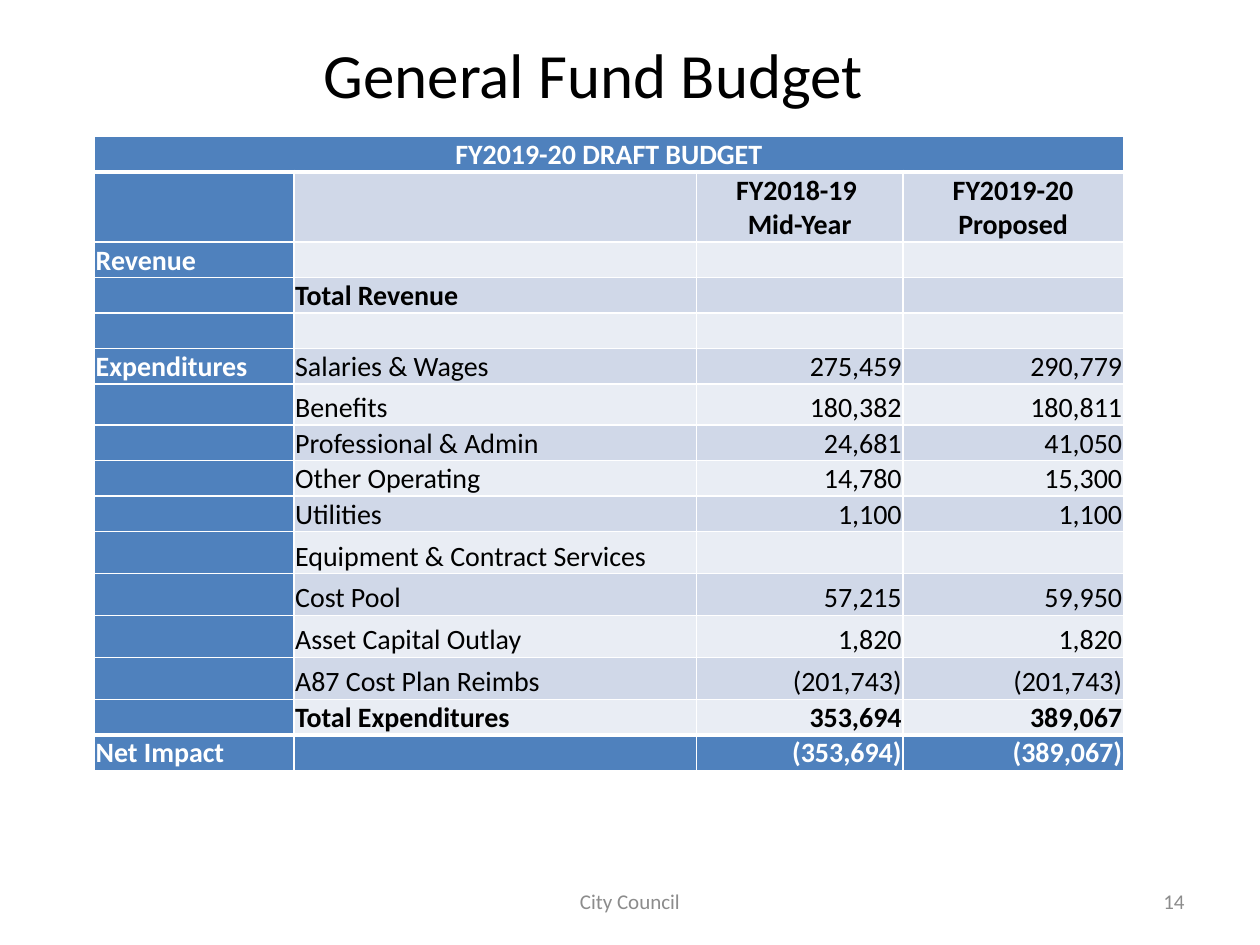
from lxml.etree import SubElement
from pptx import Presentation
from pptx.dml.color import RGBColor
from pptx.enum.text import MSO_ANCHOR as Anchor, PP_ALIGN as Align
from pptx.oxml.ns import qn
from pptx.util import Pt

BLACK = RGBColor(0x00, 0x00, 0x00)
WHITE = RGBColor(0xFF, 0xFF, 0xFF)
GRAY = RGBColor(0x8C, 0x8C, 0x8C)
BLUE = RGBColor(0x4F, 0x81, 0xBD)
BANDS = (RGBColor(0xE9, 0xED, 0xF4), RGBColor(0xD0, 0xD8, 0xE8))

COLUMN_WIDTHS = (114, 230, 118, 126)
LINE_HEIGHT = 20.2
SPECIAL_HEIGHTS = {1: 40, 6: 23.4, 10: 24, 11: 24, 12: 24, 13: 24}
BOLD_ROWS = (0, 1, 3, 14, 15)
BUDGET = [
    ("FY2019-20 DRAFT BUDGET", "", "", ""),
    ("", "", "FY2018-19 \nMid-Year", "FY2019-20 Proposed"),
    ("Revenue", "", "", ""),
    ("", "Total Revenue", "", ""),
    ("", "", "", ""),
    ("Expenditures", "Salaries & Wages", "275,459", "290,779"),
    ("", "Benefits", "180,382", "180,811"),
    ("", "Professional & Admin", "24,681", "41,050"),
    ("", "Other Operating", "14,780", "15,300"),
    ("", "Utilities", "1,100", "1,100"),
    ("", "Equipment & Contract Services", "", ""),
    ("", "Cost Pool", "57,215", "59,950"),
    ("", "Asset Capital Outlay", "1,820", "1,820"),
    ("", "A87 Cost Plan Reimbs", "(201,743)", "(201,743)"),
    ("", "Total Expenditures", "353,694", "389,067"),
    ("Net Impact", "", "(353,694)", "(389,067)"),
]


def apply(target, values):
    for name, value in values.items():
        setattr(target, name, value)


class BudgetSlide:
    font_name = "Calibri"
    cell_size = 16
    cell_format = {
        "margin_left": Pt(0.72),
        "margin_right": Pt(0.72),
        "margin_top": Pt(0.72),
        "margin_bottom": Pt(0),
        "vertical_anchor": Anchor.BOTTOM,
    }

    def __init__(self, slide):
        self.slide = slide

    def fill_text(self, frame, text, size, color, align, bold=False):
        frame.text = text
        for paragraph in frame.paragraphs:
            paragraph.alignment = align
            for run in paragraph.runs:
                apply(run.font, {"name": self.font_name, "size": Pt(size), "bold": bold})
                run.font.color.rgb = color
            if not paragraph.runs:
                SubElement(paragraph._p, qn("a:endParaRPr"), sz=str(size * 100))

    def title(self, text, left, top, width, height):
        heading = self.slide.shapes.title
        apply(heading, {"left": Pt(left), "top": Pt(top), "width": Pt(width), "height": Pt(height)})
        heading.text_frame.vertical_anchor = Anchor.MIDDLE
        self.fill_text(heading.text_frame, text, 36, BLACK, Align.CENTER)

    def footer(self, text, left, width, align):
        box = self.slide.shapes.add_textbox(Pt(left), Pt(500.4), Pt(width), Pt(28.8))
        apply(box.text_frame, {"word_wrap": True, "vertical_anchor": Anchor.MIDDLE})
        self.fill_text(box.text_frame, text, 12, GRAY, align)

    def borders(self, cell, top, bottom):
        properties = cell._tc.get_or_add_tcPr()
        for side, points in (("L", 1), ("R", 1), ("T", top), ("B", bottom)):
            line = SubElement(properties, qn(f"a:ln{side}"), w=str(Pt(points)))
            fill = SubElement(line, qn("a:solidFill"))
            SubElement(fill, qn("a:srgbClr"), val=str(WHITE))

    def table(self, rows, left, top):
        heights = [SPECIAL_HEIGHTS.get(i, LINE_HEIGHT) for i in range(len(rows))]
        last = len(rows) - 1
        grid = self.slide.shapes.add_table(
            len(rows), len(COLUMN_WIDTHS), Pt(left), Pt(top),
            Pt(sum(COLUMN_WIDTHS)), Pt(sum(heights))).table
        grid.horz_banding = False
        for column, width in zip(grid.columns, COLUMN_WIDTHS):
            column.width = Pt(width)
        grid.cell(0, 0).merge(grid.cell(0, len(COLUMN_WIDTHS) - 1))
        for r, entries in enumerate(rows):
            grid.rows[r].height = Pt(heights[r])
            for c, text in enumerate(entries):
                cell = grid.cell(r, c)
                accent = r in (0, last) or c == 0
                if r < 2:
                    align = Align.CENTER
                else:
                    align = Align.RIGHT if c > 1 else Align.LEFT
                apply(cell, self.cell_format)
                self.borders(cell, 3 if r in (1, last) else 1, 3 if r in (0, last - 1) else 1)
                cell.fill.solid()
                cell.fill.fore_color.rgb = BLUE if accent else BANDS[r % 2]
                self.fill_text(cell.text_frame, text, self.cell_size, WHITE if accent else BLACK,
                               align, c == 0 or r in BOLD_ROWS)


def main():
    deck = Presentation()
    apply(deck, {"slide_width": Pt(720), "slide_height": Pt(540)})
    page = BudgetSlide(deck.slides.add_slide(deck.slide_layouts[5]))
    page.table(BUDGET, 54, 78)
    page.title("General Fund Budget", 60, 18, 558, 48)
    page.footer("City Council", 246, 228, Align.CENTER)
    page.footer("14", 516, 168, Align.RIGHT)
    deck.save("out.pptx")


if __name__ == "__main__":
    main()
